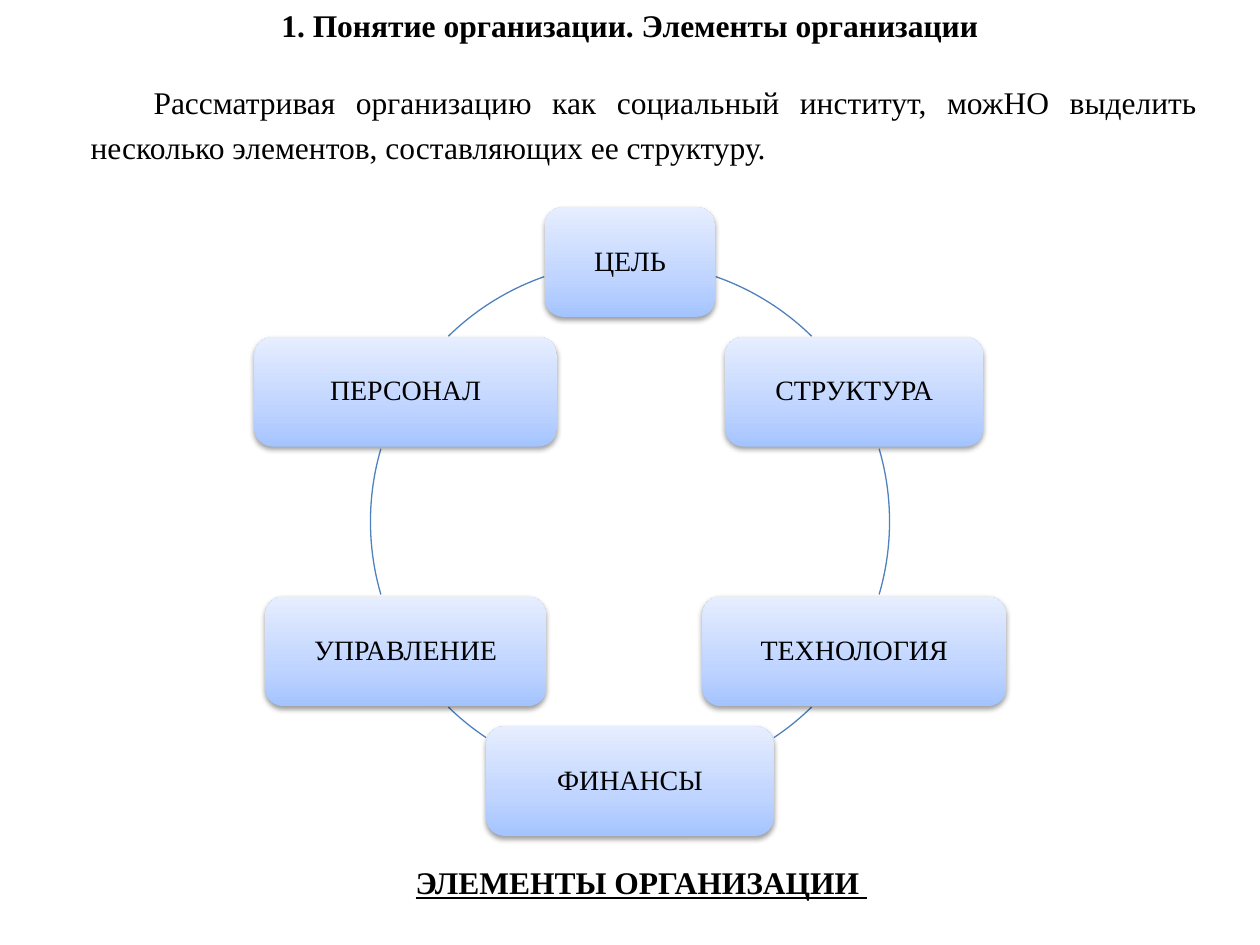
"""Build the slide on the elements of an organization."""
from pptx import Presentation
from pptx.dml.color import RGBColor
from pptx.enum.shapes import MSO_SHAPE as Kind
from pptx.enum.text import MSO_ANCHOR as Anchor, PP_ALIGN as Align
from pptx.oxml import parse_xml
from pptx.oxml.ns import nsdecls
from pptx.util import Inches, Pt


def tint(code):
    return RGBColor.from_string(code)


def write(shape, text, size=18, bold=False, under=False, align=Align.LEFT,
          lead=1.0, indent=0, wrap=True):
    frame = shape.text_frame
    frame.word_wrap = wrap
    para = frame.paragraphs[0]
    para.alignment = align
    para.line_spacing = lead
    if indent:
        props = para._p.get_or_add_pPr()
        props.set("marL", "0")
        props.set("indent", str(Inches(indent)))
    run = para.add_run()
    run.text = text
    font = run.font
    font.name = "Times New Roman"
    font.size = Pt(size)
    font.bold = bold
    font.underline = under
    font.color.rgb = tint("000000")
    return frame


deck = Presentation()
deck.slide_width, deck.slide_height = Inches(10), Inches(7.5)
shapes = deck.slides.add_slide(deck.slide_layouts[6]).shapes

label = shapes.add_textbox(Inches(3.2), Inches(6.8), Inches(3.82), Inches(0.4))
write(label, "ЭЛЕМЕНТЫ ОРГАНИЗАЦИИ ", bold=True, under=True, wrap=False)
title = shapes.add_textbox(0, 0, Inches(10), Inches(0.4))
write(title, "1. Понятие организации. Элементы организации",
      bold=True, align=Align.CENTER)

mid_x, mid_y, radius = 5, 4.14, 2.06
arcs = [(289.3, 314.4), (343.7, 16.3), (45.6, 56.3),
        (123.7, 134.4), (163.7, 196.3), (225.6, 250.7)]
for start, end in arcs:
    arc = shapes.add_shape(Kind.ARC, Inches(mid_x - radius), Inches(mid_y - radius),
                           Inches(2 * radius), Inches(2 * radius))
    arc.adjustments[0] = start * 0.6
    arc.adjustments[1] = end * 0.6
    arc.shadow.inherit = False
    arc.fill.background()
    arc.line.color.rgb = tint("4F81BD")
    arc.line.width = Pt(0.75)

stops = "".join(
    f'<a:gs pos="{place * 1000}"><a:srgbClr val="{code}"/></a:gs>'
    for place, code in [(0, "A4C4FF"), (35, "BFD4FF"), (100, "E6EEFF")])
blend = (f'<a:gradFill {nsdecls("a")} rotWithShape="1"><a:gsLst>{stops}</a:gsLst>'
         '<a:lin ang="16200000" scaled="1"/></a:gradFill>')
shade = (f'<a:effectLst {nsdecls("a")}><a:outerShdw blurRad="40000" dist="20000" '
         'dir="5400000" rotWithShape="0"><a:srgbClr val="000000">'
         '<a:alpha val="38000"/></a:srgbClr></a:outerShdw></a:effectLst>')

side, high = 1.78, 0.87
cards = [("ЦЕЛЬ", 0, -radius, 1.35), ("СТРУКТУРА", side, -radius / 2, 2.05),
         ("ТЕХНОЛОГИЯ", side, radius / 2, 2.41), ("ФИНАНСЫ", 0, radius, 2.28),
         ("УПРАВЛЕНИЕ", -side, radius / 2, 2.23),
         ("ПЕРСОНАЛ", -side, -radius / 2, 2.4)]
for text, off_x, off_y, wide in cards:
    card = shapes.add_shape(
        Kind.ROUNDED_RECTANGLE, Inches(mid_x + off_x - wide / 2),
        Inches(mid_y + off_y - high / 2), Inches(wide), Inches(high))
    card.line.fill.background()
    props = card._element.spPr
    props.insert(2, parse_xml(blend))
    props.append(parse_xml(shade))
    frame = write(card, text, size=16, align=Align.CENTER, lead=0.9)
    frame.vertical_anchor = Anchor.MIDDLE

intro = shapes.add_textbox(Inches(0.62), Inches(0.55), Inches(8.98), Inches(0.83))
write(intro, "Рассматривая организацию как социальный институт, можНО выделить "
      "несколько элементов, составляющих ее структуру.",
      align=Align.JUSTIFY, lead=1.2, indent=0.5)

deck.save("out.pptx")
